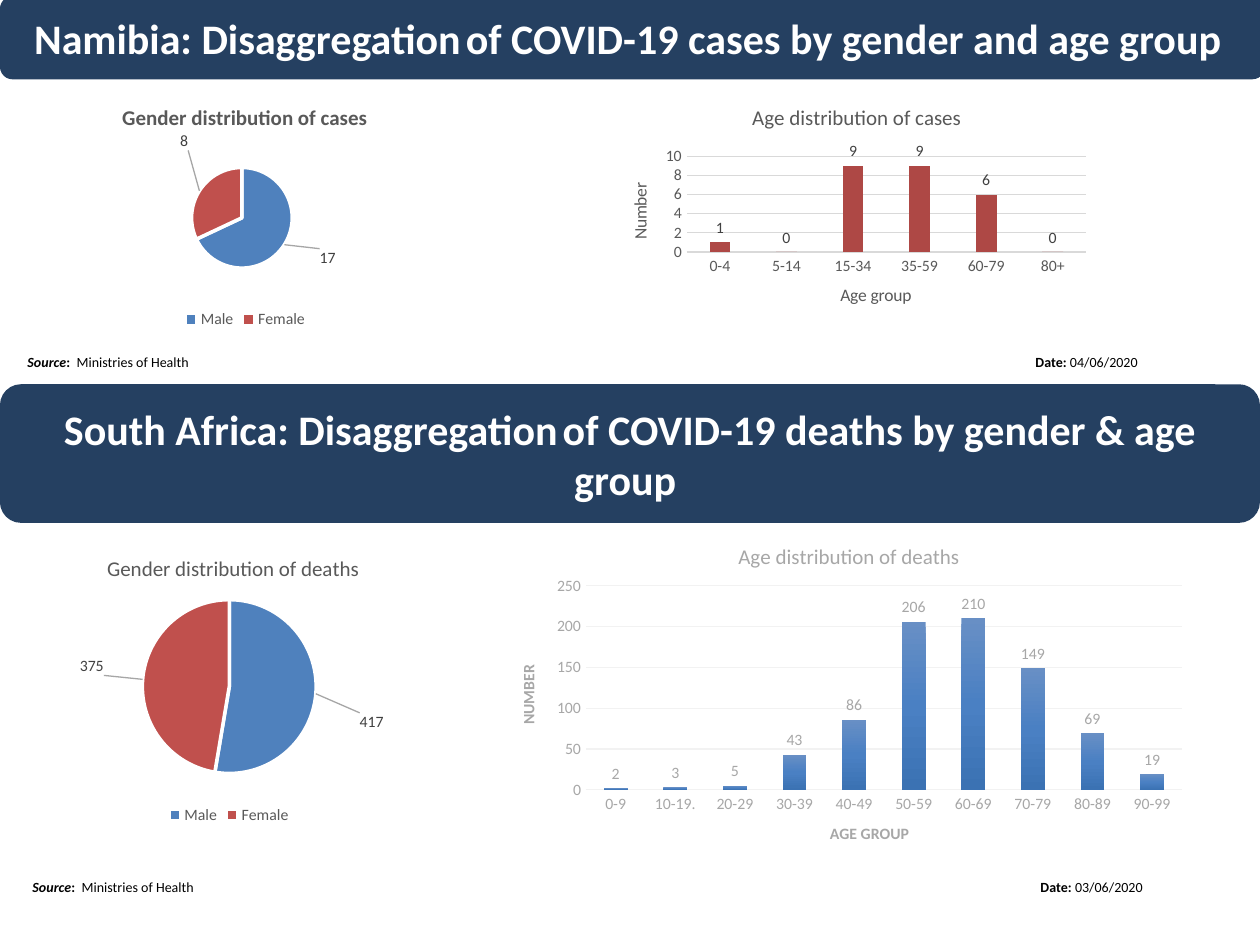
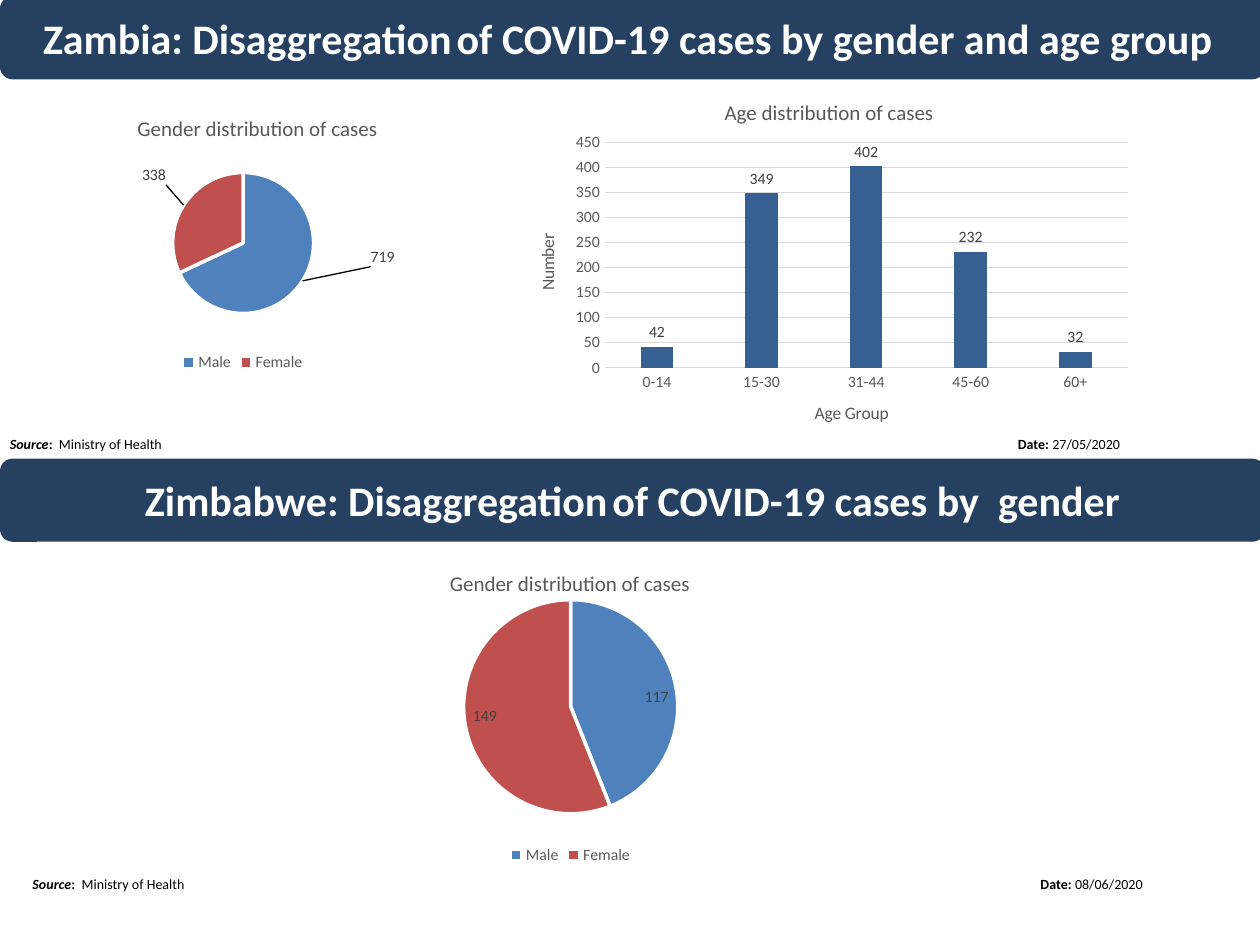
from lxml import etree
from pptx import Presentation
from pptx.chart.data import CategoryChartData
from pptx.dml.color import RGBColor
from pptx.enum.chart import XL_CHART_TYPE as ChartType
from pptx.enum.chart import XL_LABEL_POSITION as LabelPosition
from pptx.enum.chart import XL_LEGEND_POSITION as LegendPosition
from pptx.enum.chart import XL_TICK_MARK as TickMark
from pptx.enum.shapes import MSO_SHAPE as Shape
from pptx.enum.text import MSO_ANCHOR as Anchor
from pptx.enum.text import MSO_AUTO_SIZE as AutoSize
from pptx.enum.text import PP_ALIGN as Align
from pptx.oxml import parse_xml
from pptx.oxml.ns import nsdecls, qn
from pptx.util import Inches, Pt

FONT = "Calibri"
GAP_FONT = "Noto Sans"
NAVY = RGBColor(0x25, 0x40, 0x61)
WHITE = RGBColor(0xFF, 0xFF, 0xFF)
BLACK = RGBColor(0, 0, 0)
MALE = RGBColor(0x4F, 0x81, 0xBD)
FEMALE = RGBColor(0xC0, 0x50, 0x4D)
BRICK = RGBColor(0xAE, 0x48, 0x45)
STEEL = RGBColor(0x37, 0x60, 0x92)
TEXT_GREY = RGBColor(0x59, 0x59, 0x59)
LABEL_GREY = RGBColor(0x40, 0x40, 0x40)
PALE_GREY = RGBColor(0xA7, 0xA7, 0xA7)
GRID_GREY = RGBColor(0xD9, 0xD9, 0xD9)
PALE_GRID = RGBColor(0xF2, 0xF2, 0xF2)
LEADER_GREY = RGBColor(0xA6, 0xA6, 0xA6)
BLUE_GRADIENT = ((0, "688FC5"), (50, "4A80C3"), (100, "3B72B3"))
TOP_BAND = (0, -0.03, 10.04, 0.66)
DATE_TAB = 8


def style_font(font, size, color, bold=False, name=FONT):
    font.name = name
    font.size = Pt(size)
    font.bold = bold
    font.color.rgb = color


def add_span(para, text, size, color, bold=False, name=FONT):
    span = para.add_run()
    span.text = text
    style_font(span.font, size, color, bold, name)
    return span


def write_heading(shape, subject, rest):
    frame = shape.text_frame
    frame.word_wrap = True
    frame.auto_size = AutoSize.NONE
    frame.vertical_anchor = Anchor.MIDDLE
    frame.margin_left = frame.margin_right = Inches(0.1)
    frame.margin_top = frame.margin_bottom = Inches(0.1)
    para = frame.paragraphs[0]
    para.alignment = Align.CENTER
    add_span(para, subject, 24, WHITE, True)
    add_span(para, " ", 10.5, BLACK, True, GAP_FONT)
    add_span(para, rest, 24, WHITE, True)


def add_band(page, area):
    band = page.shapes.add_shape(Shape.ROUNDED_RECTANGLE, *map(Inches, area))
    band.shadow.inherit = False
    band.adjustments[0] = 0.151
    band.fill.solid()
    band.fill.fore_color.rgb = NAVY
    band.line.fill.background()
    return band


def set_title(page, subject, rest):
    """Put the title placeholder in front of the top band."""
    band = add_band(page, TOP_BAND)
    title = page.shapes.title
    title.left, title.top, title.width, title.height = map(Inches, TOP_BAND)
    title._element.addprevious(band._element)
    write_heading(title, subject, rest)


def add_footer(page, left, top, source, date):
    box = page.shapes.add_textbox(*map(Inches, (left, top, 9.5, 0.24)))
    box.text_frame.word_wrap = True
    para = box.text_frame.paragraphs[0]
    tabs = etree.SubElement(para._p.get_or_add_pPr(), qn("a:tabLst"))
    etree.SubElement(tabs, qn("a:tab"), pos=str(Inches(DATE_TAB)), algn="l")
    add_span(para, "Source", 8, BLACK, True).font.italic = True
    add_span(para, ":", 8, BLACK, True)
    add_span(para, f"  {source}\t", 8, BLACK)
    add_span(para, "Date:", 8, BLACK, True)
    add_span(para, f" {date}", 8, BLACK)


def manual_layout(x, y, modes=(), size=()):
    """Layout element in fractions of the chart."""
    items = [f'<c:{tag} val="{value}"/>' for tag, value in modes]
    items += [f'<c:{tag} val="{value:.4f}"/>'
              for tag, value in zip("xywh", (x, y, *size))]
    return parse_xml(f'<c:layout {nsdecls("c")}><c:manualLayout>{"".join(items)}'
                     '</c:manualLayout></c:layout>')


def set_layout(element, index, layout):
    for old in element.findall(qn("c:layout")):
        element.remove(old)
    element.insert(index, layout)


def place_parts(chart, area, plot, title_at):
    """Fix the inner plot area and the title, given in inches on the page."""
    left, top, width, height = area
    edges = (("xMode", "edge"), ("yMode", "edge"))
    set_layout(chart._chartSpace.chart.plotArea, 0, manual_layout(
        (plot[0] - left) / width, (plot[1] - top) / height,
        (("layoutTarget", "inner"), *edges), (plot[2] / width, plot[3] / height)))
    set_layout(chart.chart_title._element, 1, manual_layout(
        (title_at[0] - left) / width, (title_at[1] - top) / height, edges))


def add_chart(page, kind, area, plot, title_at, title, categories, values, color,
              bold=False):
    data = CategoryChartData()
    data.categories = categories
    data.add_series("Series 1", values)
    chart = page.shapes.add_chart(kind, *map(Inches, area), data).chart
    style_font(chart.font, 10, BLACK)
    chart.has_title = True
    set_heading(chart.chart_title, title, 12, color, bold)
    place_parts(chart, area, plot, title_at)
    return chart


def set_heading(heading, text, size, color, bold):
    heading.text_frame.text = text
    style_font(heading.text_frame.paragraphs[0].runs[0].font, size, color, bold)


def show_values(series, color, position):
    labels = series.data_labels
    labels.show_value = True
    labels.show_percentage = False
    labels.position = position
    style_font(labels.font, 9, color)


def move_labels(series, offsets, area, leader_color):
    """Shift the slice labels by inches and join them with leader lines."""
    for index in range(len(offsets)):
        label = series.points[index].data_label
        label.position = LabelPosition.OUTSIDE_END
        style_font(label.font, 9, LABEL_GREY)
    labels = series._element.find(qn("c:dLbls"))
    for label, (dx, dy) in zip(labels.findall(qn("c:dLbl")), offsets):
        set_layout(label, 1, manual_layout(dx / area[2], dy / area[3]))
    for old in labels.findall(qn("c:showLeaderLines")):
        labels.remove(old)
    etree.SubElement(labels, qn("c:showLeaderLines"), val="1")
    labels.append(parse_xml(
        f'<c:leaderLines {nsdecls("c", "a")}><c:spPr><a:ln w="9525"><a:solidFill>'
        f'<a:srgbClr val="{leader_color}"/></a:solidFill></a:ln></c:spPr>'
        '</c:leaderLines>'))


def add_gender_pie(page, area, center, radius, title_at, topic, values, offsets=(),
                   leader_color=LEADER_GREY, bold=False):
    plot = (center[0] - radius, center[1] - radius, 2 * radius, 2 * radius)
    chart = add_chart(page, ChartType.PIE, area, plot, title_at,
                      f"Gender distribution of {topic}", ("Male", "Female"),
                      values, TEXT_GREY, bold)
    chart.has_legend = True
    chart.legend.position = LegendPosition.BOTTOM
    chart.legend.include_in_layout = False
    style_font(chart.legend.font, 9, TEXT_GREY)
    series = chart.plots[0].series[0]
    for index, color in enumerate((MALE, FEMALE)):
        look = series.points[index].format
        look.fill.solid()
        look.fill.fore_color.rgb = color
        look.line.color.rgb = WHITE
        look.line.width = Pt(2)
    if offsets:
        show_values(series, LABEL_GREY, LabelPosition.OUTSIDE_END)
        move_labels(series, offsets, area, leader_color)
    else:
        show_values(series, LABEL_GREY, LabelPosition.INSIDE_END)


def fill_gradient(series, stops):
    items = "".join(f'<a:gs pos="{place * 1000}"><a:srgbClr val="{color}"/></a:gs>'
                    for place, color in stops)
    series._element.get_or_add_spPr().insert(0, parse_xml(
        f'<a:gradFill {nsdecls("a")}><a:gsLst>{items}</a:gsLst>'
        '<a:lin ang="5400000" scaled="0"/></a:gradFill>'))


def add_age_columns(page, area, plot, title_at, topic, ages, values, top, step,
                    axis_titles, color=None, pale=False):
    """Column chart by age; without a colour the columns get the blue gradient."""
    text_color = PALE_GREY if pale else TEXT_GREY
    line_color = PALE_GRID if pale else GRID_GREY
    chart = add_chart(page, ChartType.COLUMN_CLUSTERED, area, plot, title_at,
                      f"Age distribution of {topic}", ages, values, text_color)
    chart.has_legend = False
    for axis, title in zip((chart.category_axis, chart.value_axis), axis_titles):
        axis.has_title = True
        set_heading(axis.axis_title, title, 9 if pale else 10, text_color, pale)
        axis.major_tick_mark = axis.minor_tick_mark = TickMark.NONE
        style_font(axis.tick_labels.font, 9, text_color)
    chart.category_axis.format.line.color.rgb = line_color
    chart.category_axis.format.line.width = Pt(0.75)
    scale = chart.value_axis
    scale.minimum_scale, scale.maximum_scale, scale.major_unit = 0, top, step
    scale.format.line.fill.background()
    scale.has_major_gridlines = True
    scale.major_gridlines.format.line.color.rgb = line_color
    scale.major_gridlines.format.line.width = Pt(0.75)
    columns = chart.plots[0]
    columns.vary_by_categories = False
    columns.gap_width = 150 if pale else 219
    series = columns.series[0]
    if color is None:
        fill_gradient(series, BLUE_GRADIENT)
    else:
        series.format.fill.solid()
        series.format.fill.fore_color.rgb = color
    show_values(series, PALE_GREY if pale else LABEL_GREY, LabelPosition.OUTSIDE_END)


def build_namibia_south_africa(page):
    set_title(page, "Namibia: Disaggregation",
              "of COVID-19 cases by gender and age group ")
    add_gender_pie(page, (0.43, 0.72, 3.04, 1.93), (1.92, 1.73), 0.4, (0.94, 0.79),
                   "cases", (17, 8), ((0.23, 0), (-0.04, -0.29)), bold=True)
    add_age_columns(page, (4.79, 0.74, 3.91, 1.91), (5.45, 1.24, 3.17, 0.76),
                    (5.94, 0.79), "cases",
                    ("0-4", "5-14", "15-34", "35-59", "60-79", "80+"),
                    (1, 0, 9, 9, 6, 0), 10, 2, ("Age group", "Number"), BRICK)
    add_footer(page, 0.12, 2.76, "Ministries of Health", "04/06/2020")

    write_heading(add_band(page, (0, 3.05, 10, 1.1)), "South Africa: Disaggregation",
                  "of COVID-19 deaths by gender & age group ")
    add_gender_pie(page, (0.16, 4.22, 3.32, 2.36), (1.82, 5.45), 0.69, (0.82, 4.37),
                   "deaths", (417, 375), ((0.29, 0.22), (-0.25, -0.1)))
    add_age_columns(page, (3.92, 4.11, 5.57, 2.79), (4.65, 4.65, 4.73, 1.62),
                    (5.83, 4.27), "deaths",
                    ("0-9", "10-19.", "20-29", "30-39", "40-49", "50-59", "60-69",
                     "70-79", "80-89", "90-99"),
                    (2, 3, 5, 43, 86, 206, 210, 149, 69, 19), 250, 50,
                    ("AGE GROUP", "NUMBER"), pale=True)
    add_footer(page, 0.16, 6.92, "Ministries of Health", "03/06/2020")


def build_zambia_zimbabwe(page):
    set_title(page, "Zambia: Disaggregation",
              "of COVID-19 cases by gender and age group ")
    add_gender_pie(page, (0.14, 0.78, 3.58, 2.21), (1.93, 1.93), 0.56, (1.06, 0.88),
                   "cases", (719, 338), ((0.49, -0.29), (-0.09, -0.13)), BLACK)
    add_age_columns(page, (4.06, 0.59, 5, 3), (4.8, 1.13, 4.15, 1.79), (5.72, 0.75),
                    "cases", ("0-14", "15-30", "31-44", "45-60", "60+"),
                    (42, 349, 402, 232, 32), 450, 50, ("Age Group", "Number"), STEEL)
    add_footer(page, -0.02, 3.41, "Ministry of Health", "27/05/2020")

    write_heading(add_band(page, (0, 3.64, 10.04, 0.66)), "Zimbabwe: Disaggregation",
                  "of COVID-19 cases by  gender")
    add_gender_pie(page, (2.64, 4.21, 3.78, 2.69), (4.53, 5.61), 0.85, (3.54, 4.49),
                   "cases", (117, 149))
    add_footer(page, 0.16, 6.9, "Ministry of Health", "08/06/2020")


def main():
    deck = Presentation()
    deck.slide_width, deck.slide_height = Inches(10), Inches(7.5)
    title_only = deck.slide_layouts[5]
    for build in (build_namibia_south_africa, build_zambia_zimbabwe):
        build(deck.slides.add_slide(title_only))
    deck.save("out.pptx")


if __name__ == "__main__":
    main()
